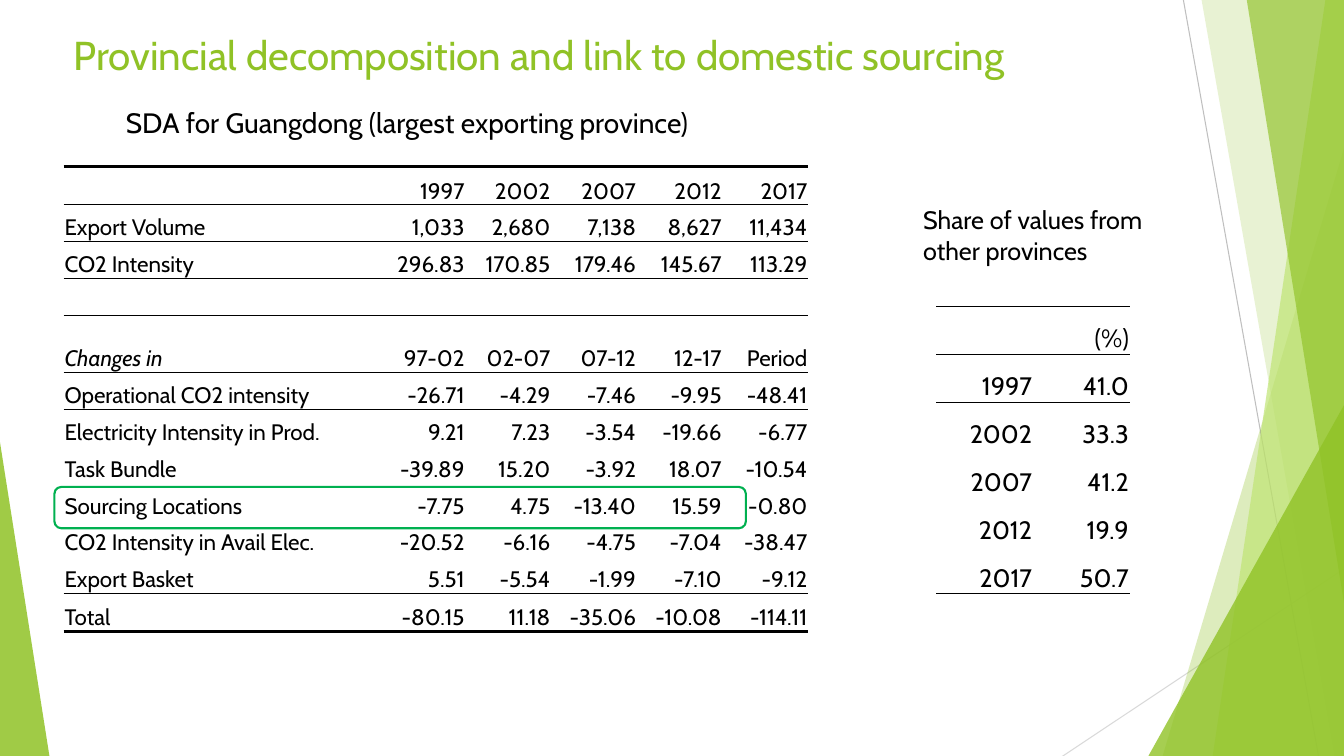
from pptx import Presentation
from pptx.dml.color import RGBColor
from pptx.enum.shapes import MSO_CONNECTOR, MSO_SHAPE
from pptx.enum.text import MSO_ANCHOR, PP_ALIGN
from pptx.oxml.ns import qn
from pptx.util import Pt
from lxml import etree

STRAIGHT = MSO_CONNECTOR.STRAIGHT
TRIANGLE = MSO_SHAPE.ISOSCELES_TRIANGLE
ROUNDED = MSO_SHAPE.ROUNDED_RECTANGLE
BOTTOM = MSO_ANCHOR.BOTTOM
LEFT = PP_ALIGN.LEFT
RIGHT = PP_ALIGN.RIGHT
FONT = "Cabin"
NO_TABLE_STYLE = "{2D5ABB26-0587-4C30-8999-92F81FD0307C}"
COLORS = {
    "green": "90C226",
    "lime": "C0E474",
    "gray": "BFBFBF",
    "light_gray": "D9D9D9",
    "black": "000000",
    "highlight": "00B050",
}
CELL_FORMAT = {
    "vertical_anchor": BOTTOM,
    "margin_left": Pt(0.75),
    "margin_right": Pt(0.75),
    "margin_top": Pt(0.75),
    "margin_bottom": Pt(0),
}
DECOMPOSITION = [
    ["", "1997", "2002", "2007", "2012", "2017"],
    ["Export Volume", "1,033", "2,680", "7,138", "8,627", "11,434"],
    ["CO2 Intensity", "296.83", "170.85", "179.46", "145.67", "113.29"],
    [""] * 6,
    ["Changes in", "97-02", "02-07", "07-12", "12-17", "Period"],
    ["Operational CO2 intensity", "-26.71", "-4.29", "-7.46", "-9.95", "-48.41"],
    ["Electricity Intensity in Prod.", "9.21", "7.23", "-3.54", "-19.66", "-6.77"],
    ["Task Bundle", "-39.89", "15.20", "-3.92", "18.07", "-10.54"],
    ["Sourcing Locations", "-7.75", "4.75", "-13.40", "15.59", "-0.80"],
    ["CO2 Intensity in Avail Elec.", "-20.52", "-6.16", "-4.75", "-7.04", "-38.47"],
    ["Export Basket", "5.51", "-5.54", "-1.99", "-7.10", "-9.12"],
    ["Total", "-80.15", "11.18", "-35.06", "-10.08", "-114.11"],
]
SHARES = [
    ["", "(%)"],
    ["1997", "41.0"],
    ["2002", "33.3"],
    ["2007", "41.2"],
    ["2012", "19.9"],
    ["2017", "50.7"],
]


def rgb(name):
    return RGBColor.from_string(COLORS[name])


def write(paragraph, text, size, color="black", italic=False):
    run = paragraph.add_run()
    run.text = text
    font_format = {"name": FONT, "size": Pt(size), "italic": italic}
    for attribute, value in font_format.items():
        setattr(run.font, attribute, value)
    run.font.color.rgb = rgb(color)


def add_text(slide, box, text, size, color="black"):
    text_frame = slide.shapes.add_textbox(*map(Pt, box)).text_frame
    text_frame.word_wrap = True
    write(text_frame.paragraphs[0], text, size, color)


def fill_translucent(shape, color, opacity):
    shape.shadow.inherit = False
    shape.line.fill.background()
    shape.fill.solid()
    shape.fill.fore_color.rgb = rgb(color)
    color_element = shape.fill._xPr.find(qn("a:solidFill"))[0]
    etree.SubElement(color_element, qn("a:alpha")).set("val", str(opacity * 1000))


def add_decoration(slide, box):
    left, top, width, height = box
    right, bottom = left + width, top + height
    lines = [
        (right - 114.7, top, right - 18.2, bottom, "gray"),
        (right + 169, top + 293.8, right - 206.2, bottom + 3.6, "light_gray"),
    ]
    for *ends, color in lines:
        connector = slide.shapes.add_connector(STRAIGHT, *map(Pt, ends))
        connector.line.color.rgb = rgb(color)
        connector.line.width = Pt(0.75)
        etree.SubElement(connector._element.spPr, qn("a:effectLst"))

    bands = [
        (3, 543.6, 990.7, 1066.3, 1066.3, 829.4, "green", 30),
        (-0.7, 540, 858.2, 1062, 1062, 953.3, "green", 20),
        (-0.7, 540, 946.8, 967.7, 967.7, 866.2, "lime", 70),
        (0, 540.7, 890.6, 989.3, 989.3, 977.8, "green", 65),
    ]
    for start, end, top_left, top_right, bottom_right, bottom_left, color, opacity in bands:
        points = [(top_left, start), (top_right, start), (bottom_right, end), (bottom_left, end)]
        corners = [(Pt(left + x), Pt(top + y)) for x, y in points]
        builder = slide.shapes.build_freeform(*corners[0])
        builder.add_line_segments(corners[1:], close=True)
        fill_translucent(builder.convert_to_shape(), color, opacity)

    triangles = [
        (right - 139.7, bottom - 257, 143.3, 257, 1, 80),
        (left, bottom - 224, 35.3, 224, 0, 85),
    ]
    for *place, apex, opacity in triangles:
        triangle = slide.shapes.add_shape(TRIANGLE, *map(Pt, place))
        triangle.adjustments[0] = apex
        fill_translucent(triangle, "green", opacity)


def set_rule(cell, tag, width, position):
    border = etree.Element(qn(tag), w=str(Pt(width)))
    fill = etree.SubElement(border, qn("a:solidFill"))
    etree.SubElement(fill, qn("a:srgbClr")).set("val", COLORS["black"])
    cell._tc.get_or_add_tcPr().insert(position, border)


def add_ruled_table(slide, box, rows, widths, heights, rules, size, first_align):
    table = slide.shapes.add_table(len(rows), len(widths), *map(Pt, box)).table
    table.first_row = table.horz_banding = False
    table._tbl.tblPr.find(qn("a:tableStyleId")).text = NO_TABLE_STYLE
    for column, width in zip(table.columns, widths):
        column.width = Pt(width)
    for row_index, (values, height) in enumerate(zip(rows, heights)):
        table.rows[row_index].height = Pt(height)
        for column_index, text in enumerate(values):
            cell = table.cell(row_index, column_index)
            for attribute, value in CELL_FORMAT.items():
                setattr(cell, attribute, value)
            cell.fill.background()
            edges = [("a:lnT", row_index), ("a:lnB", row_index + 1)]
            ruled = [(tag, rules[edge]) for tag, edge in edges if edge in rules]
            for position, (tag, width) in enumerate(ruled):
                set_rule(cell, tag, width, position)
            if text:
                paragraph = cell.text_frame.paragraphs[0]
                paragraph.alignment = RIGHT if column_index else first_align
                write(paragraph, text, size, italic=text == "Changes in")


def add_decomposition(slide, box):
    left, top, width, height = box
    add_text(slide, (left + 37.4, top - 46.8, 443, 31.7),
             "SDA for Guangdong (largest exporting province)", 20)
    widths = [226] + [(width - 226) / 5] * 5
    heights = [27.4] + [26.3] * 3 + [41] + [26.3] * 6 + [27.4]
    rules = {0: 2, 1: 0.5, 3: 0.5, 5: 0.5, 11: 0.5, 12: 2}
    add_ruled_table(slide, box, DECOMPOSITION, widths, heights, rules, 16, LEFT)


def add_highlight(slide, box):
    highlight = slide.shapes.add_shape(ROUNDED, *map(Pt, box))
    highlight.shadow.inherit = False
    highlight.fill.background()
    highlight.line.color.rgb = rgb("highlight")
    highlight.line.width = Pt(1.5)


def add_shares(slide, box):
    left, top, width, height = box
    add_text(slide, (left - 16.6, top - 76.3, 202.3, 51),
             "Share of values from other provinces", 18)
    widths = [width / 2] * 2
    heights = [height / len(SHARES)] * len(SHARES)
    rules = {0: 0.5, 1: 0.5, 6: 0.5}
    add_ruled_table(slide, box, SHARES, widths, heights, rules, 18, RIGHT)


def main():
    presentation = Presentation()
    presentation.slide_width = Pt(960)
    presentation.slide_height = Pt(540)
    slide = presentation.slides.add_slide(presentation.slide_layouts[6])
    add_decoration(slide, (0, 0, 960, 540))
    add_text(slide, (45.4, 18, 762, 61.2),
             "Provincial decomposition and link to domestic sourcing", 28.8, "green")
    add_decomposition(slide, (45.4, 118.8, 532, 332.6))
    add_shares(slide, (668.9, 218.9, 138.2, 205.2))
    add_highlight(slide, (38.9, 347.8, 493.9, 29.5))
    presentation.save("out.pptx")


if __name__ == "__main__":
    main()
